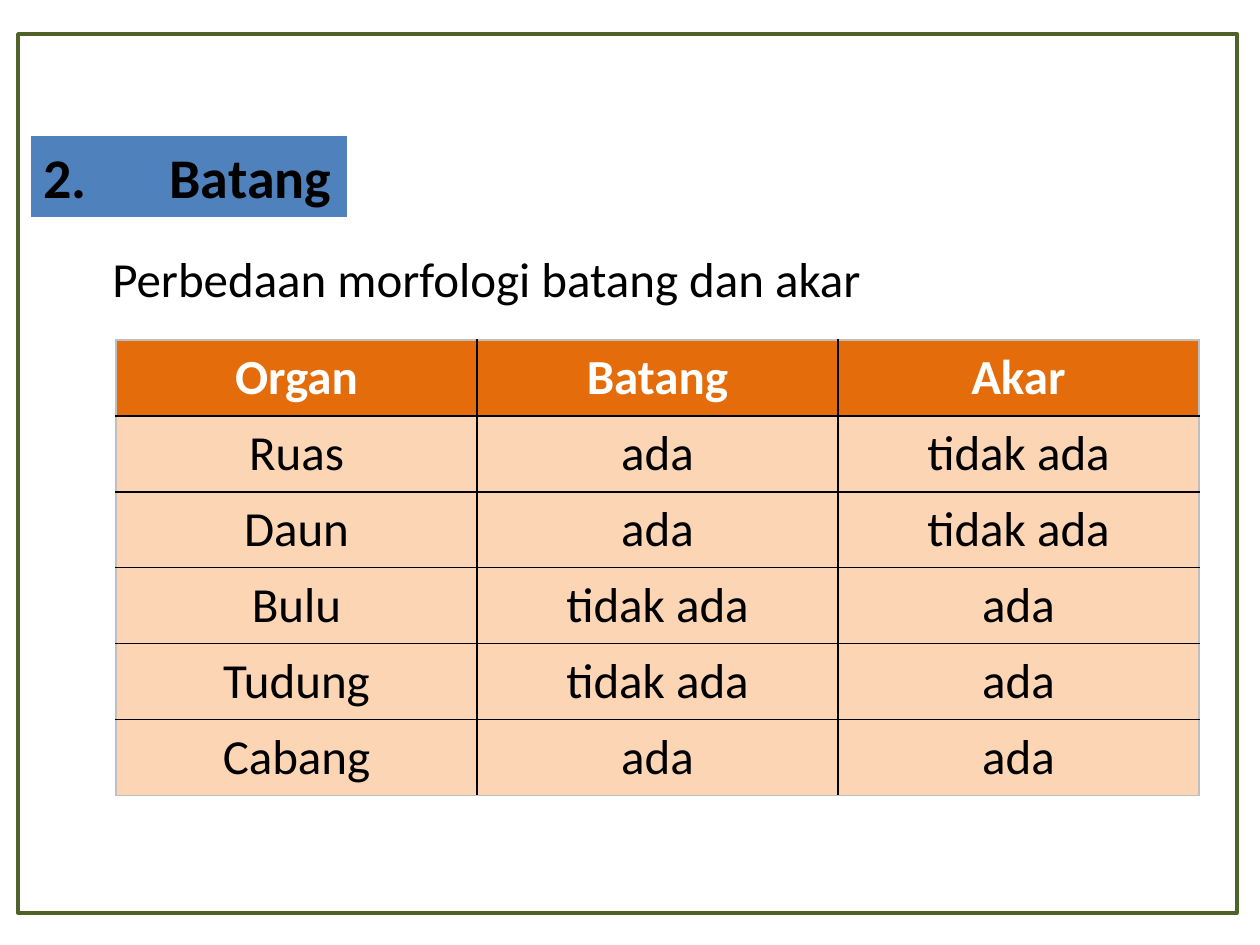
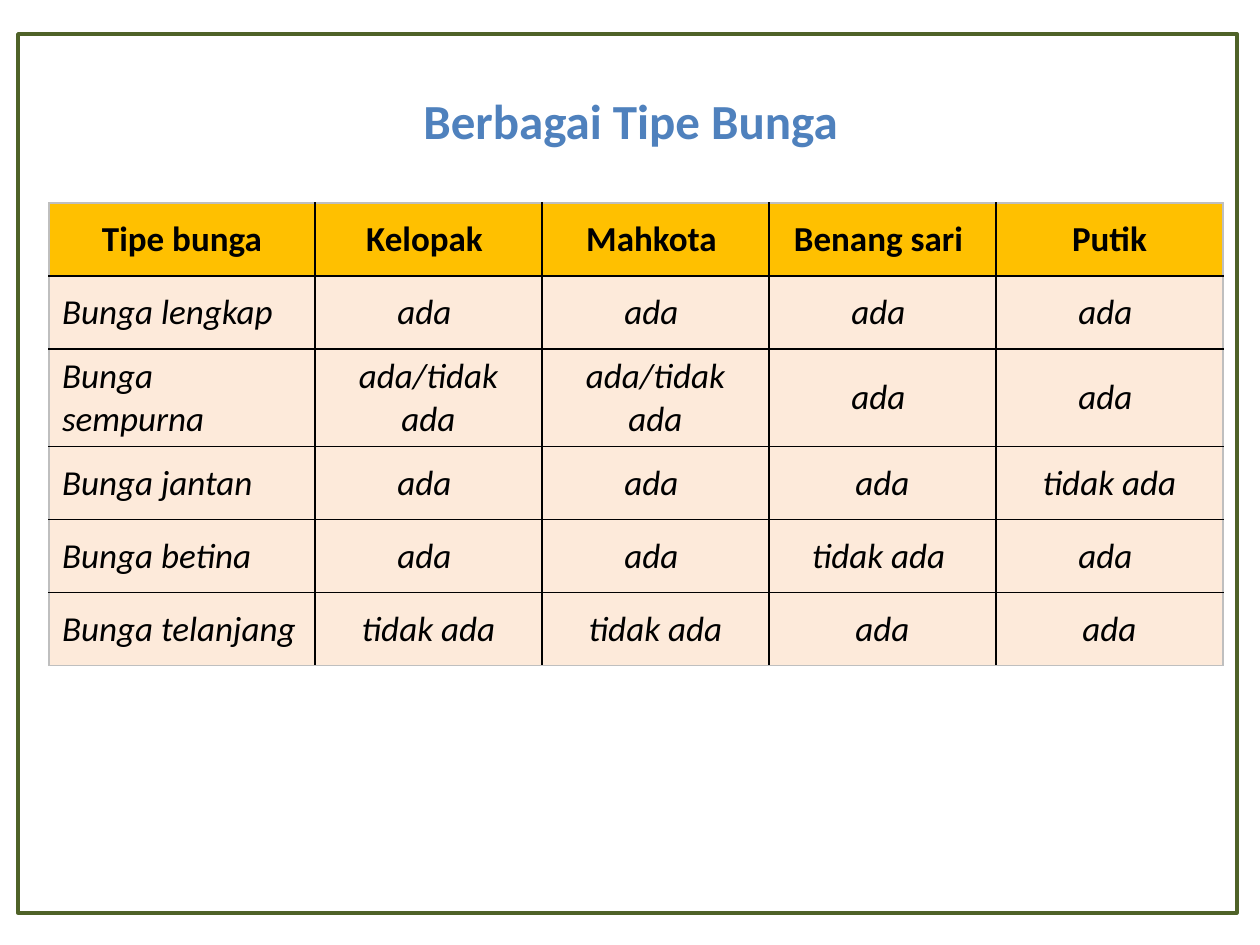
from lxml import etree
from pptx import Presentation, util as u
from pptx.dml.color import RGBColor
from pptx.enum import shapes, text
from pptx.oxml import ns

# Shared style
FONT = "Calibri"
BLACK = RGBColor(0x00, 0x00, 0x00)
WHITE = RGBColor(0xFF, 0xFF, 0xFF)
GREEN = RGBColor(0x4F, 0x62, 0x28)
BLUE = RGBColor(0x4F, 0x81, 0xBD)
GREY = RGBColor(0xBF, 0xBF, 0xBF)
ORANGE = RGBColor(0xE4, 0x6C, 0x0A)
PEACH = RGBColor(0xFC, 0xD5, 0xB5)
YELLOW = RGBColor(0xFF, 0xC0, 0x00)
CREAM = RGBColor(0xFD, 0xEA, 0xDA)
LEFT, CENTER = text.PP_ALIGN.LEFT, text.PP_ALIGN.CENTER
TOP, MIDDLE = text.MSO_ANCHOR.TOP, text.MSO_ANCHOR.MIDDLE

# Geometry in px, 126 to the inch
SLIDE_SIZE = (1260, 945)
FRAME_BOX = (18, 34, 1219, 879)

# Content
SLIDES = [
    {
        "title": {"text": "2. \tBatang", "box": (31, 136, 316, 81), "align": LEFT,
                  "fill": BLUE, "tab": 126,
                  "font": {"size": u.Pt(32), "bold": True}, "color": BLACK},
        "subtitle": {"text": "Perbedaan morfologi batang dan akar",
                     "box": (100, 242, 781, 72), "align": LEFT,
                     "font": {"size": u.Pt(28)}, "color": BLACK},
        "table": {
            "corner": (116, 340), "columns": [361, 361, 361], "row_height": 75,
            "margins": (16, 8), "anchor": TOP, "first_align": CENTER,
            "size": 28, "italic": False,
            "head": (ORANGE, WHITE), "body": (PEACH, BLACK),
            "rows": [
                ("Organ", "Batang", "Akar"),
                ("Ruas", "ada", "tidak ada"),
                ("Daun", "ada", "tidak ada"),
                ("Bulu", "tidak ada", "ada"),
                ("Tudung", "tidak ada", "ada"),
                ("Cabang", "ada", "ada"),
            ],
        },
    },
    {
        "title": {"text": "Berbagai Tipe Bunga", "box": (408, 84, 445, 72),
                  "align": CENTER,
                  "font": {"size": u.Pt(28), "bold": True}, "color": BLUE},
        "table": {
            "corner": (49, 203), "columns": [266, 227, 227, 227, 227],
            "row_height": 73, "margins": (13, 6), "anchor": MIDDLE,
            "first_align": LEFT, "size": 20, "italic": True,
            "head": (YELLOW, BLACK), "body": (CREAM, BLACK),
            "rows": [
                ("Tipe bunga", "Kelopak ", "Mahkota ", "Benang sari ", "Putik"),
                ("Bunga lengkap", "ada ", "ada ", "ada ", "ada "),
                ("Bunga sempurna", "ada/tidak ada", "ada/tidak ada", "ada ", "ada "),
                ("Bunga jantan", "ada ", "ada ", "ada", "tidak ada"),
                ("Bunga betina", "ada ", "ada ", "tidak ada ", "ada "),
                ("Bunga telanjang", "tidak ada", "tidak ada", "ada", "ada"),
            ],
        },
    },
]


def px(length):
    return u.Emu(round(length * 914400 / 126))


def set_all(target, values):
    for name, value in values.items():
        setattr(target, name, value)


def write(text_frame, words, align, font, color):
    paragraph = text_frame.paragraphs[0]
    paragraph.alignment = align
    run = paragraph.add_run()
    run.text = words
    set_all(run.font, {"name": FONT, **font})
    run.font.color.rgb = color
    return paragraph


def add_frame(slide):
    frame = slide.shapes.add_shape(shapes.MSO_SHAPE.RECTANGLE, *map(px, FRAME_BOX))
    frame.shadow.inherit = False
    frame.fill.background()
    frame.line.color.rgb = GREEN
    frame.line.width = u.Pt(2)


def format_label(shape, label):
    """Place a one-line label, with an optional fill and tab stop."""
    left, top, width, height = map(px, label["box"])
    set_all(shape, {"left": left, "top": top, "width": width, "height": height})
    set_all(shape.text_frame, {"word_wrap": False, "vertical_anchor": TOP,
                               "auto_size": text.MSO_AUTO_SIZE.NONE})
    paragraph = write(shape.text_frame, label["text"], label["align"],
                      label["font"], label["color"])
    if "fill" in label:
        shape.fill.solid()
        shape.fill.fore_color.rgb = label["fill"]
    if "tab" in label:
        properties = paragraph._p.get_or_add_pPr()
        stops = etree.SubElement(properties, ns.qn("a:tabLst"))
        etree.SubElement(stops, ns.qn("a:tab"), pos=str(px(label["tab"])), algn="l")


def add_borders(cell, edges):
    """Draw 1 pt cell edges: grey on the outside, black inside."""
    properties = cell._tc.get_or_add_tcPr()
    for side, is_outer in edges.items():
        line = etree.SubElement(properties, ns.qn(f"a:ln{side}"), w=str(u.Pt(1)))
        fill = etree.SubElement(line, ns.qn("a:solidFill"))
        color = GREY if is_outer else BLACK
        etree.SubElement(fill, ns.qn("a:srgbClr"), val=str(color))


def add_grid(slide, grid):
    rows, columns = grid["rows"], grid["columns"]
    box = (*grid["corner"], sum(columns), grid["row_height"] * len(rows))
    table = slide.shapes.add_table(len(rows), len(columns), *map(px, box)).table
    set_all(table, {"first_row": False, "horz_banding": False})
    for column, width in zip(table.columns, columns):
        column.width = px(width)
    side, end = map(px, grid["margins"])
    for r, row in enumerate(rows):
        table.rows[r].height = px(grid["row_height"])
        is_head = r == 0
        fill, color = grid["head" if is_head else "body"]
        font = {"size": u.Pt(grid["size"]), "bold": is_head,
                "italic": grid["italic"] and not is_head}
        for c, words in enumerate(row):
            cell = table.cell(r, c)
            add_borders(cell, {"L": c == 0, "R": c == len(columns) - 1,
                               "T": is_head, "B": r == len(rows) - 1})
            cell.fill.solid()
            cell.fill.fore_color.rgb = fill
            set_all(cell, {"margin_left": side, "margin_right": side,
                           "margin_top": end, "margin_bottom": end,
                           "vertical_anchor": grid["anchor"]})
            align = grid["first_align"] if c == 0 and not is_head else CENTER
            write(cell.text_frame, words, align, font, color)


def main():
    presentation = Presentation()
    presentation.slide_width, presentation.slide_height = map(px, SLIDE_SIZE)
    title_only = presentation.slide_layouts[5]
    for content in SLIDES:
        slide = presentation.slides.add_slide(title_only)
        add_frame(slide)
        format_label(slide.shapes.title, content["title"])
        if "subtitle" in content:
            box = map(px, content["subtitle"]["box"])
            format_label(slide.shapes.add_textbox(*box), content["subtitle"])
        add_grid(slide, content["table"])
    presentation.save("out.pptx")


if __name__ == "__main__":
    main()
